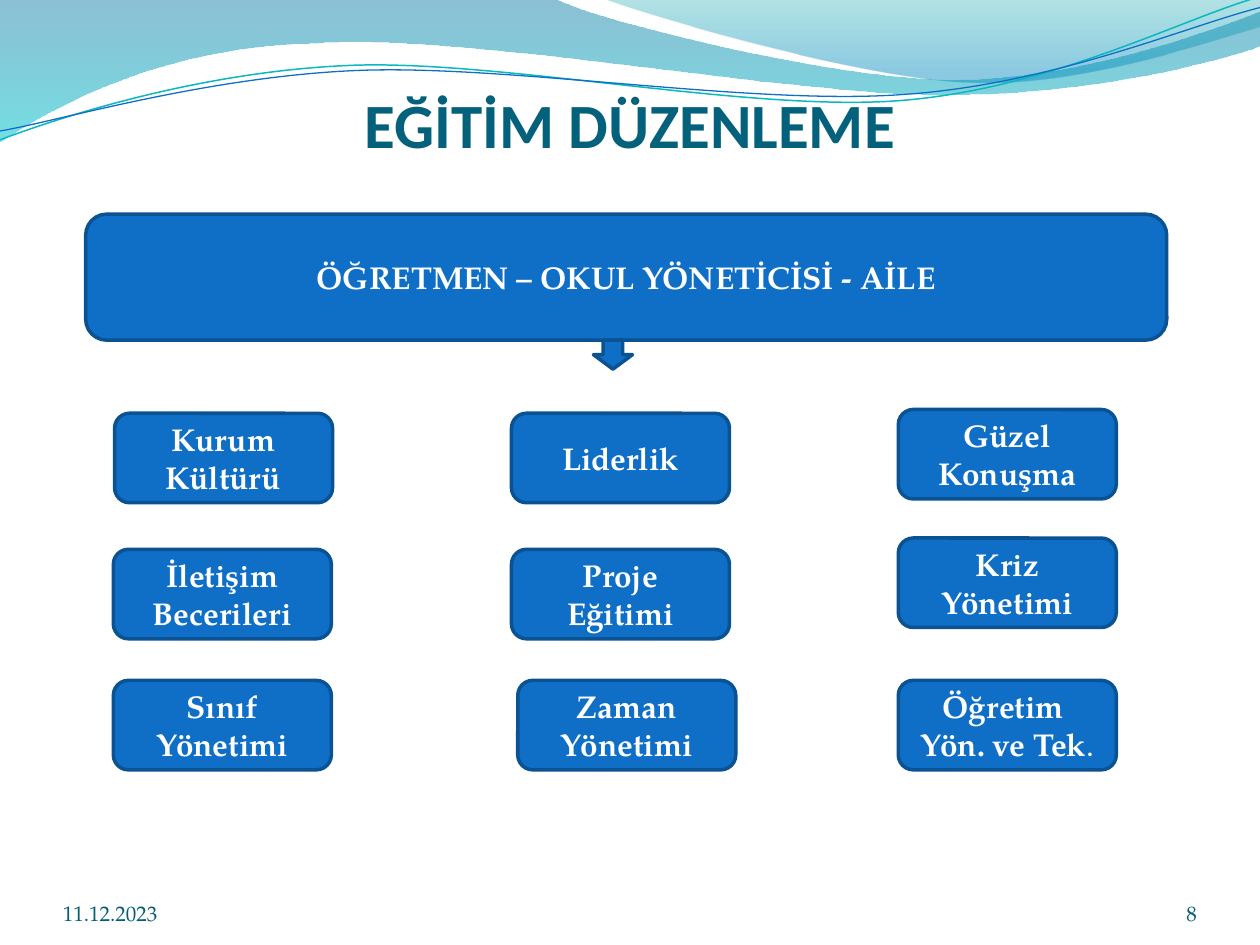
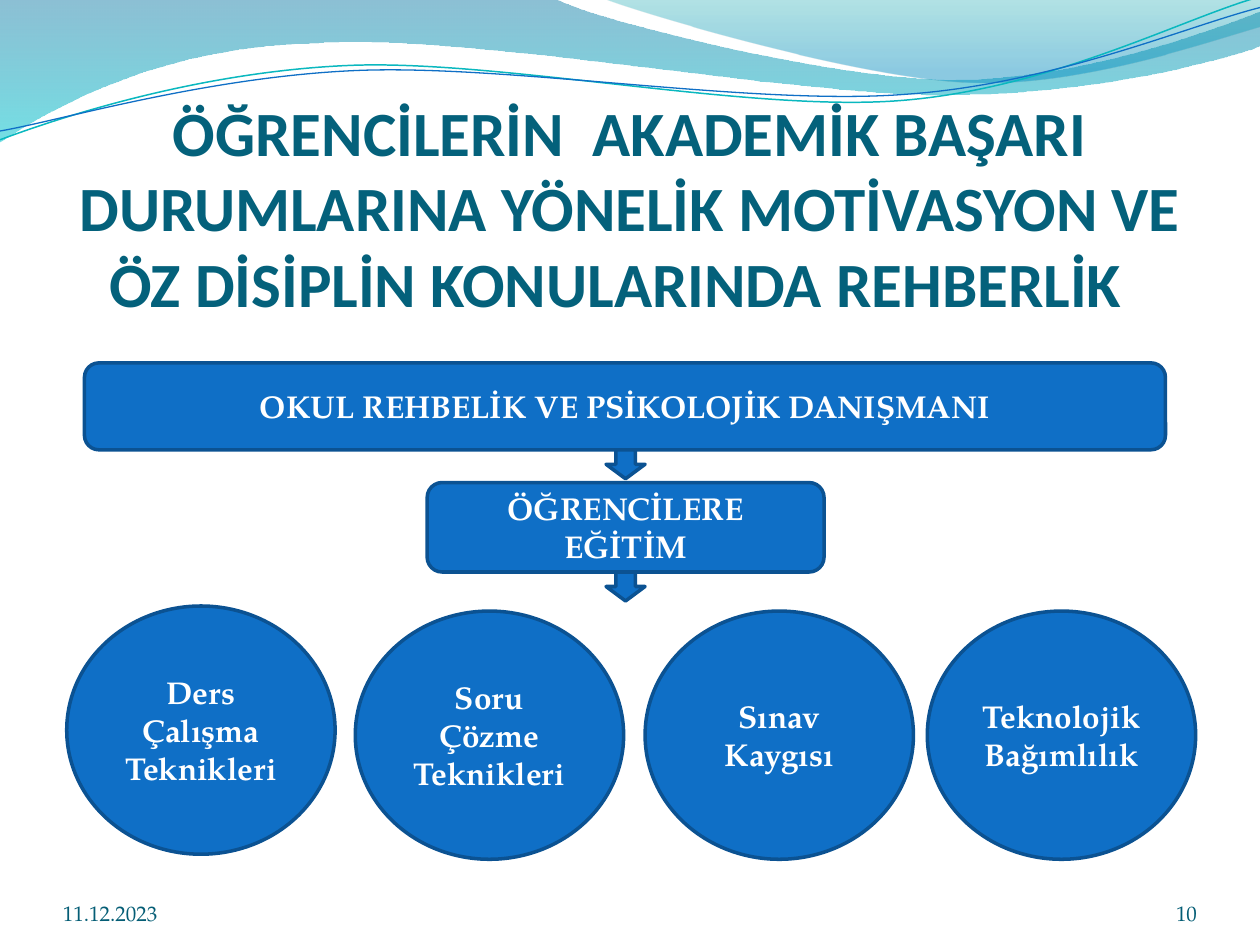
from pptx import Presentation
from pptx.dml.color import RGBColor
from pptx.enum.shapes import MSO_SHAPE as Preset
from pptx.enum.text import MSO_ANCHOR as Anchor, MSO_AUTO_SIZE as AutoSize, PP_ALIGN as Align
from pptx.oxml.ns import qn
from pptx.util import Inches, Pt
from lxml import etree

# Shared style
TITLE_FONT, BODY_FONT = "Calibri", "TeX Gyre Pagella"
TITLE_COLOR, FOOTER_COLOR = "04617B", "045D75"
BOX_FILL, BOX_LINE, WHITE = "0F6FC6", "0B5292", "FFFFFF"
DATE = "11.12.2023"
TILE_SIZE = (1.73, 0.71)
CIRCLE_SIZE = (2.13, 1.97)
ARROW_SIZE = (0.31, 0.23)

# Header bands: start point, then line targets (2 numbers) or curves (6 numbers);
# gradient stops are position, colour, opacity
BANDS = [
    dict(start=(0, 0), steps=[
        (4.4, -0.01), (4.76, 0.17, 6.64, 0.63, 7.58, 0.63),
        (8.53, 0.63, 9.58, 0.26, 10, 0.09), (10.01, 0.36),
        (9.83, 0.44, 8.7, 0.76, 7.46, 0.75), (6.22, 0.75, 3.82, 0.28, 2.57, 0.34),
        (1.29, 0.36, 0.46, 0.83, -0.01, 1.13)],
        stops=[(0, "0074A1", 45), (1, "00C6CF", 55)]),
    dict(start=(4.79, -0.01), steps=[
        (5.09, 0.11, 6.82, 0.62, 7.69, 0.65), (8.56, 0.69, 9.61, 0.32, 10, 0.21),
        (10, 0)],
        stops=[(0, "00A1A9", 30), (0.8, "008BBF", 45)]),
    dict(start=(0, 1.11), steps=[
        (0.48, 0.93, 1.58, 0.57, 2.77, 0.52), (3.95, 0.47, 5.93, 0.89, 7.13, 0.8),
        (8.33, 0.71, 9.38, 0.15, 9.98, -0.02)],
        line=("0AB8BF", 0.85)),
    dict(start=(0, 1.04), steps=[
        (0.47, 0.96, 1.64, 0.61, 2.83, 0.56), (4.03, 0.51, 5.97, 0.84, 7.17, 0.75),
        (8.36, 0.67, 9.41, 0.21, 10, 0.06)],
        line=("0F6FC6", 0.75)),
]

# Slide content
TRAINING = dict(
    number="8", title="EĞİTİM DÜZENLEME", title_area=(0.5, 0.36, 9, 0.92),
    banner=("ÖĞRETMEN – OKUL YÖNETİCİSİ - AİLE", (0.68, 1.7, 8.58, 1)),
    arrow=(4.71, 2.7))
TOPICS = [  # text, left, top
    ("Kurum Kültürü", 0.91, 3.28), ("Liderlik", 4.06, 3.28), ("Güzel Konuşma", 7.13, 3.25),
    ("İletişim Becerileri", 0.9, 4.36), ("Proje Eğitimi", 4.06, 4.36), ("Kriz Yönetimi", 7.13, 4.27),
    ("Sınıf Yönetimi", 0.9, 5.4), ("Zaman Yönetimi", 4.11, 5.4), ("Öğretim \nYön. ve Tek", 7.13, 5.4),
]
GUIDANCE = dict(
    number="10",
    title="ÖĞRENCİLERİN  AKADEMİK BAŞARI DURUMLARINA YÖNELİK MOTİVASYON VE "
          "ÖZ DİSİPLİN KONULARINDA REHBERLİK  ",
    title_area=(0.5, 0.68, 9, 1.86),
    banner=("OKUL REHBELİK VE PSİKOLOJİK DANIŞMANI", (0.67, 2.88, 8.58, 0.69)),
    arrow=(4.81, 3.57))
STUDENTS = ("ÖĞRENCİLERE EĞİTİM", (3.39, 3.83, 3.15, 0.71))
STUDENTS_ARROW = (4.81, 4.54)
SKILLS = [
    ("Ders Çalışma Teknikleri", 0.53, 4.81), ("Soru Çözme Teknikleri", 2.82, 4.85),
    ("Sınav Kaygısı", 5.12, 4.85), ("Teknolojik Bağımlılık", 7.36, 4.85),
]


def color(value):
    return RGBColor.from_string(value)


def inches(values):
    return [Inches(value) for value in values]


def style_text(frame, font, size, tint, align, bold=False):
    for para in frame.paragraphs:
        para.alignment = align
        for span in para.runs:
            span.font.name, span.font.size, span.font.bold = font, Pt(size), bold
            span.font.color.rgb = color(tint)


def set_margins(frame, top=0):
    frame.margin_left = frame.margin_right = frame.margin_bottom = 0
    frame.margin_top = Inches(top)
    frame.vertical_anchor = Anchor.BOTTOM
    frame.word_wrap = True


# Header bands
def bend_curves(shape, steps):
    """Join each three segments of a curve step into one cubic curve."""
    segments = iter(list(shape.element.iter(qn("a:lnTo"))))
    for step in steps:
        first = next(segments)
        if len(step) == 6:
            first.tag = qn("a:cubicBezTo")
            for _ in range(2):
                segment = next(segments)
                first.append(segment[0])
                segment.getparent().remove(segment)


def draw_band(slide, band):
    filled = "stops" in band
    points = [inches(step[i:i + 2]) for step in band["steps"] for i in range(0, len(step), 2)]
    builder = slide.shapes.build_freeform(*inches(band["start"]))
    builder.add_line_segments(points, close=filled)
    shape = builder.convert_to_shape()
    bend_curves(shape, band["steps"])
    shape.shadow.inherit = False
    if filled:
        shape.fill.gradient()
        shape.fill.gradient_angle = 270
        for stop, (position, tint, _) in zip(shape.fill.gradient_stops, band["stops"]):
            stop.position, stop.color.rgb = position, color(tint)
        for node, (_, _, opacity) in zip(shape.element.iter(qn("a:srgbClr")), band["stops"]):
            etree.SubElement(node, qn("a:alpha")).set("val", str(opacity * 1000))
        shape.line.fill.background()
    else:
        tint, width = band["line"]
        shape.fill.background()
        shape.line.color.rgb, shape.line.width = color(tint), Pt(width)
    return shape


def add_bands_to_layout(slide):
    tree = slide.slide_layout.shapes.element
    for order, band in enumerate(BANDS):
        element = draw_band(slide, band).element
        element.nvSpPr.cNvPr.set("id", str(100 + order))
        tree.insert(2 + order, element)


# Diagram parts
def add_box(slide, preset, area, text=""):
    box = slide.shapes.add_shape(preset, *inches(area))
    box.shadow.inherit = False
    box.fill.solid()
    box.fill.fore_color.rgb = color(BOX_FILL)
    box.line.color.rgb, box.line.width = color(BOX_LINE), Pt(2)
    if text:
        box.text_frame.text = text
        box.text_frame.vertical_anchor = Anchor.MIDDLE
        style_text(box.text_frame, BODY_FONT, 18, WHITE, Align.CENTER, bold=True)
    return box


def add_arrow(slide, position):
    add_box(slide, Preset.DOWN_ARROW, position + ARROW_SIZE)


def add_footer(slide, text, left, width, align):
    frame = slide.shapes.add_textbox(*inches((left, 6.95, width, 0.4))).text_frame
    frame.text = text
    set_margins(frame)
    style_text(frame, BODY_FONT, 12, FOOTER_COLOR, align)


def add_page(deck, content):
    slide = deck.slides.add_slide(deck.slide_layouts[5])
    title = slide.shapes.title
    title.left, title.top, title.width, title.height = inches(content["title_area"])
    title.text_frame.text = content["title"]
    title.text_frame.auto_size = AutoSize.NONE
    set_margins(title.text_frame, top=0.05)
    style_text(title.text_frame, TITLE_FONT, 36, TITLE_COLOR, Align.CENTER, bold=True)
    add_footer(slide, DATE, 0.5, 2.33, Align.LEFT)
    add_footer(slide, content["number"], 8.67, 0.83, Align.RIGHT)
    text, area = content["banner"]
    add_box(slide, Preset.ROUNDED_RECTANGLE, area, text)
    add_arrow(slide, content["arrow"])
    return slide


def main():
    deck = Presentation()
    deck.slide_width, deck.slide_height = Inches(10), Inches(7.5)

    # Training topics
    slide = add_page(deck, TRAINING)
    add_bands_to_layout(slide)
    for text, left, top in TOPICS:
        tile = add_box(slide, Preset.ROUNDED_RECTANGLE, (left, top) + TILE_SIZE, text)
    period = tile.text_frame.paragraphs[-1].add_run()
    period.text = "."
    period.font.name, period.font.size, period.font.bold = BODY_FONT, Pt(18), False
    period.font.color.rgb = color(WHITE)

    # Student guidance
    slide = add_page(deck, GUIDANCE)
    text, area = STUDENTS
    add_box(slide, Preset.ROUNDED_RECTANGLE, area, text)
    add_arrow(slide, STUDENTS_ARROW)
    for text, left, top in SKILLS:
        add_box(slide, Preset.OVAL, (left, top) + CIRCLE_SIZE, text)

    deck.save("out.pptx")


if __name__ == "__main__":
    main()
